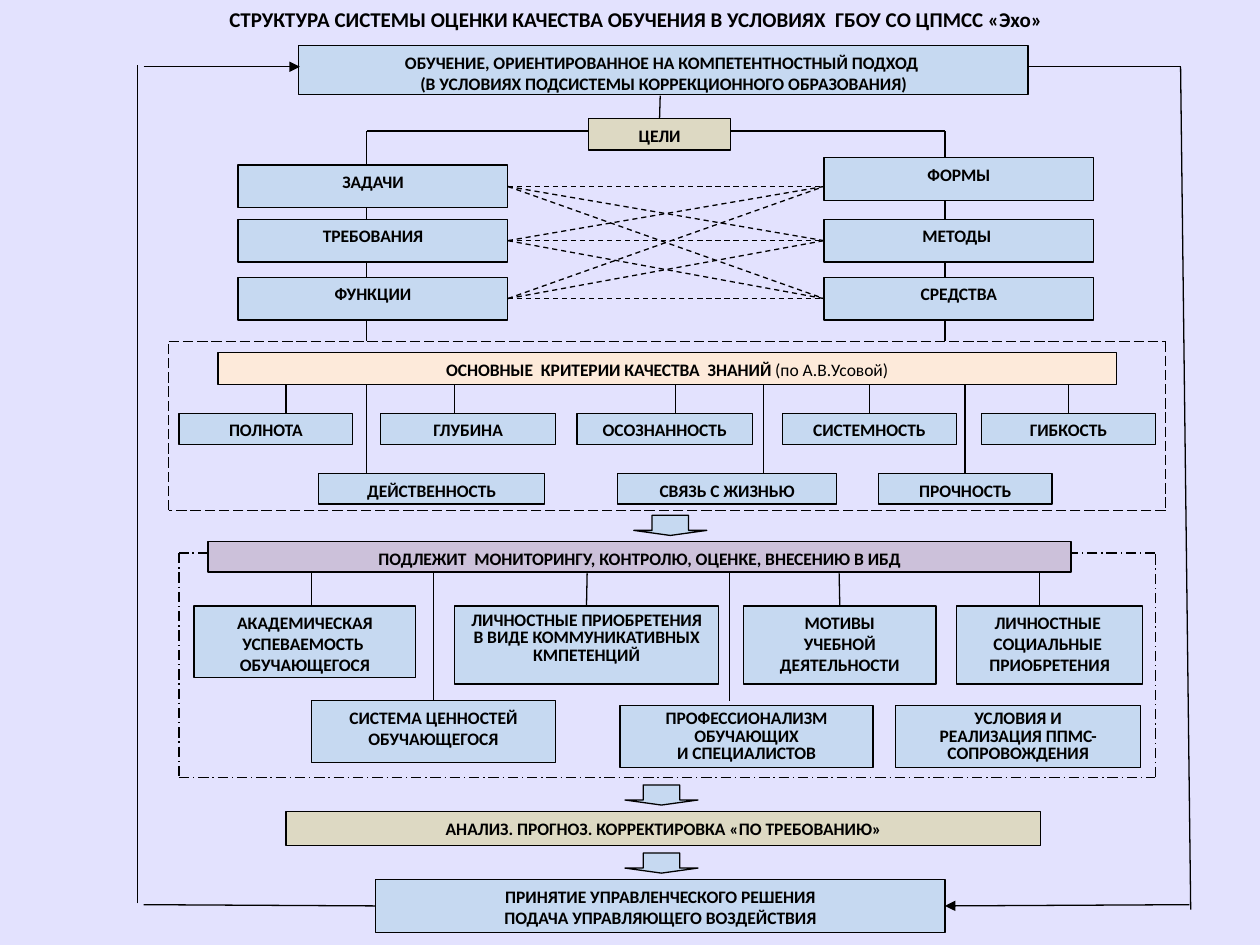
from dataclasses import dataclass
from itertools import pairwise, product

from lxml.etree import SubElement
from pptx import Presentation
from pptx.dml.color import RGBColor
from pptx.enum.dml import MSO_LINE
from pptx.enum.shapes import MSO_CONNECTOR, MSO_SHAPE
from pptx.enum.text import MSO_ANCHOR, PP_ALIGN
from pptx.oxml.ns import qn
from pptx.util import Inches, Pt

COLOURS = {
    "background": "E3E2FE",
    "ink": "000000",
    "blue": "C6D9F1",
    "sand": "DDD9C3",
    "peach": "FDEADA",
    "violet": "CCC1DA",
}
FONT = "Calibri"
LINE_WIDTH = 0.75
JOIN_TOLERANCE = 0.022  # inches between a line end and the middle of a side

Point = tuple[float, float]


@dataclass
class Box:
    text: str
    left: float
    top: float
    width: float
    height: float
    fill: str = "blue"
    note: str = ""  # plain text after the bold text
    spacing: float | None = None  # exact line spacing in points
    side_inset: float = 0.1
    top_inset: float = 0.05

    def side_middles(self) -> list[Point]:
        """Middles of the top, left, bottom and right sides."""
        middle_x, middle_y = self.left + self.width / 2, self.top + self.height / 2
        return [(middle_x, self.top), (self.left, middle_y),
                (middle_x, self.top + self.height), (self.left + self.width, middle_y)]


def colour(name: str) -> RGBColor:
    return RGBColor.from_string(COLOURS[name])


def write(frame, text: str, *, size: float = 10, align=PP_ALIGN.CENTER,
          spacing: float | None = None, note: str = "") -> None:
    """Write bold lines into a text frame, then an optional plain note."""
    frame.word_wrap = True
    frame.vertical_anchor = MSO_ANCHOR.TOP
    for index, line in enumerate(text.split("\n")):
        para = frame.add_paragraph() if index else frame.paragraphs[0]
        para.alignment = align
        if spacing:
            para.line_spacing = Pt(spacing)
        for words, bold in ((line, True), (note, False)):
            if words:
                span = para.add_run()
                span.text = words
                span.font.name = FONT
                span.font.size = Pt(size)
                span.font.bold = bold
                span.font.color.rgb = colour("ink")


def draw_shape(page, kind, left: float, top: float, width: float, height: float,
               fill: str):
    shape = page.shapes.add_shape(kind, Inches(left), Inches(top),
                                  Inches(width), Inches(height))
    shape.shadow.inherit = False
    shape.fill.solid()
    shape.fill.fore_color.rgb = colour(fill)
    shape.line.color.rgb = colour("ink")
    shape.line.width = Pt(LINE_WIDTH)
    return shape


def draw_box(page, box: Box):
    shape = draw_shape(page, MSO_SHAPE.RECTANGLE, box.left, box.top,
                       box.width, box.height, box.fill)
    frame = shape.text_frame
    frame.margin_left = frame.margin_right = Inches(box.side_inset)
    frame.margin_top = frame.margin_bottom = Inches(box.top_inset)
    write(frame, box.text, spacing=box.spacing, note=box.note)
    return shape


def join(connect, point: Point, drawn: list) -> None:
    """Join a connector end to the box whose side has its middle there."""
    for box, shape in drawn:
        for site, middle in enumerate(box.side_middles()):
            if all(abs(a - b) < JOIN_TOLERANCE for a, b in zip(point, middle)):
                connect(shape, site)
                return


def draw_route(page, drawn: list, *points: Point, dash=None, arrow: bool = False) -> None:
    """Draw straight connectors from point to point."""
    for start, end in pairwise(points):
        line = page.shapes.add_connector(
            MSO_CONNECTOR.STRAIGHT, *(Inches(value) for value in start + end))
        line.line.color.rgb = colour("ink")
        line.line.width = Pt(LINE_WIDTH)
        if dash:
            line.line.dash_style = dash
        properties = line._element.spPr
        SubElement(properties, qn("a:effectLst"))
        if arrow and end == points[-1]:
            SubElement(properties.find(qn("a:ln")), qn("a:tailEnd"), type="triangle")
        join(line.begin_connect, start, drawn)
        join(line.end_connect, end, drawn)


# Boxes of the scheme, from top to bottom
LEFT_TOPS, RIGHT_TOPS = (1.31, 1.74, 2.2), (1.25, 1.74, 2.2)
BOXES = [
    Box("ОБУЧЕНИЕ, ОРИЕНТИРОВАННОЕ НА КОМПЕТЕНТНОСТНЫЙ ПОДХОД \n"
        "(В УСЛОВИЯХ ПОДСИСТЕМЫ КОРРЕКЦИОННОГО ОБРАЗОВАНИЯ)", 2.37, 0.36, 5.79, 0.39),
    Box("ЦЕЛИ", 4.67, 0.94, 1.13, 0.25, "sand"),
    *(Box(text, 1.89, top, 2.14, 0.34)
      for text, top in zip(("ЗАДАЧИ", "ТРЕБОВАНИЯ", "ФУНКЦИИ"), LEFT_TOPS)),
    *(Box(text, 6.54, top, 2.14, 0.34)
      for text, top in zip(("ФОРМЫ", "МЕТОДЫ ", "СРЕДСТВА"), RIGHT_TOPS)),
    # Criteria of knowledge quality
    Box("ОСНОВНЫЕ  КРИТЕРИИ КАЧЕСТВА  ЗНАНИЙ ", 1.73, 2.8, 7.13, 0.25, "peach",
        note="(по А.В.Усовой)"),
    Box("ПОЛНОТА", 1.42, 3.28, 1.38, 0.25),
    Box("ГЛУБИНА", 3.02, 3.28, 1.39, 0.25),
    Box("ОСОЗНАННОСТЬ", 4.58, 3.28, 1.39, 0.25, side_inset=0.04),
    Box("СИСТЕМНОСТЬ", 6.21, 3.28, 1.38, 0.25),
    Box("ГИБКОСТЬ", 7.79, 3.28, 1.38, 0.25),
    Box("ДЕЙСТВЕННОСТЬ", 2.53, 3.76, 1.79, 0.24),
    Box("СВЯЗЬ С ЖИЗНЬЮ", 4.9, 3.76, 1.74, 0.24),
    Box("ПРОЧНОСТЬ", 6.97, 3.76, 1.38, 0.24),
    # Objects of monitoring
    Box("ПОДЛЕЖИТ  МОНИТОРИНГУ, КОНТРОЛЮ, ОЦЕНКЕ, ВНЕСЕНИЮ В ИБД",
        1.65, 4.3, 6.85, 0.24, "violet"),
    Box("АКАДЕМИЧЕСКАЯ УСПЕВАЕМОСТЬ \nОБУЧАЮЩЕГОСЯ", 1.54, 4.81, 1.76, 0.57),
    Box("ЛИЧНОСТНЫЕ ПРИОБРЕТЕНИЯ В ВИДЕ КОММУНИКАТИВНЫХ КМПЕТЕНЦИЙ",
        3.61, 4.81, 2.09, 0.62, spacing=10),
    Box("МОТИВЫ\nУЧЕБНОЙ ДЕЯТЕЛЬНОСТИ", 5.9, 4.81, 1.53, 0.62),
    Box("ЛИЧНОСТНЫЕ \nСОЦИАЛЬНЫЕ \nПРИОБРЕТЕНИЯ", 7.59, 4.81, 1.48, 0.62),
    Box("СИСТЕМА ЦЕННОСТЕЙ\nОБУЧАЮЩЕГОСЯ", 2.47, 5.56, 1.94, 0.49),
    Box("ПРОФЕССИОНАЛИЗМ\nОБУЧАЮЩИХ\nИ СПЕЦИАЛИСТОВ", 4.92, 5.6, 2.01, 0.49,
        spacing=10, top_inset=0.04),
    Box("УСЛОВИЯ И\nРЕАЛИЗАЦИЯ ППМС-СОПРОВОЖДЕНИЯ", 7.11, 5.6, 1.94, 0.49,
        spacing=10, top_inset=0.04),
    # Outcome
    Box("АНАЛИЗ. ПРОГНОЗ. КОРРЕКТИРОВКА «ПО ТРЕБОВАНИЮ»", 2.27, 6.44, 5.99, 0.27, "sand"),
    Box("ПРИНЯТИЕ УПРАВЛЕНЧЕСКОГО РЕШЕНИЯ\nПОДАЧА УПРАВЛЯЮЩЕГО ВОЗДЕЙСТВИЯ",
        2.98, 6.98, 4.52, 0.42),
]

# Vertical links: top, bottom and the places across
VERTICAL_LINKS = [
    (0.76, 0.94, (5.24,)),
    (1.65, 1.74, (2.91,)), (1.59, 1.74, (7.5,)),
    (2.08, 2.2, (2.91, 7.5)), (2.54, 2.71, (2.91, 7.5)),
    (3.05, 3.28, (2.27, 3.61, 5.36, 6.9, 8.48)),
    (3.05, 3.76, (2.91, 6.06, 7.66)),
    (4.55, 4.81, (2.47, 4.66, 6.66, 8.25)),
    (4.55, 5.56, (3.44, 5.79)),
]


def main() -> None:
    deck = Presentation()
    deck.slide_width, deck.slide_height = Inches(10), Inches(7.5)
    page = deck.slides.add_slide(deck.slide_layouts[5])
    page.background.fill.solid()
    page.background.fill.fore_color.rgb = colour("background")

    # Title
    title = page.shapes.title
    title.left, title.top = Inches(1.72), Inches(0)
    title.width, title.height = Inches(7.27), Inches(0.61)
    write(title.text_frame,
          "СТРУКТУРА СИСТЕМЫ ОЦЕНКИ КАЧЕСТВА ОБУЧЕНИЯ В УСЛОВИЯХ  ГБОУ СО ЦПМСС «Эхо»",
          size=12, align=PP_ALIGN.LEFT)

    drawn = [(box, draw_box(page, box)) for box in BOXES]

    # Links between neighbouring levels
    for top, bottom, places in VERTICAL_LINKS:
        for x in places:
            draw_route(page, drawn, (x, top), (x, bottom))
    draw_route(page, drawn, (4.67, 1.04), (2.91, 1.04), (2.91, 1.31))
    draw_route(page, drawn, (5.8, 1.04), (7.5, 1.04), (7.5, 1.25))

    # Every left box with every right box
    for left_y, right_y in product((1.47, 1.89, 2.39), (1.48, 1.89, 2.39)):
        draw_route(page, drawn, (4.03, left_y), (6.54, right_y), dash=MSO_LINE.DASH)

    # Dashed frames
    draw_route(page, drawn, (1.34, 2.71), (9.25, 2.71), (9.25, 4.05), (1.34, 4.05),
               (1.34, 2.71), dash=MSO_LINE.LONG_DASH)
    draw_route(page, drawn, (1.65, 4.39), (1.42, 4.39), (1.42, 6.17), (9.17, 6.17),
               (9.17, 4.39), (8.5, 4.39), dash=MSO_LINE.LONG_DASH_DOT)

    # Block arrows
    for left, top in ((5.03, 4.09), (4.96, 6.23), (4.96, 6.77)):
        arrow = draw_shape(page, MSO_SHAPE.DOWN_ARROW, left, top, 0.58, 0.16, "blue")
        arrow.adjustments[0], arrow.adjustments[1] = 0.5, 0.25

    # Feedback loops
    draw_route(page, drawn, (2.98, 7.18), (1.14, 7.18))
    draw_route(page, drawn, (1.09, 7.17), (1.09, 0.52))
    draw_route(page, drawn, (1.14, 0.53), (2.38, 0.53), arrow=True)
    draw_route(page, drawn, (8.17, 0.53), (9.37, 0.53), (9.45, 7.22))
    draw_route(page, drawn, (9.44, 7.18), (7.5, 7.18), arrow=True)

    deck.save("out.pptx")


if __name__ == "__main__":
    main()
